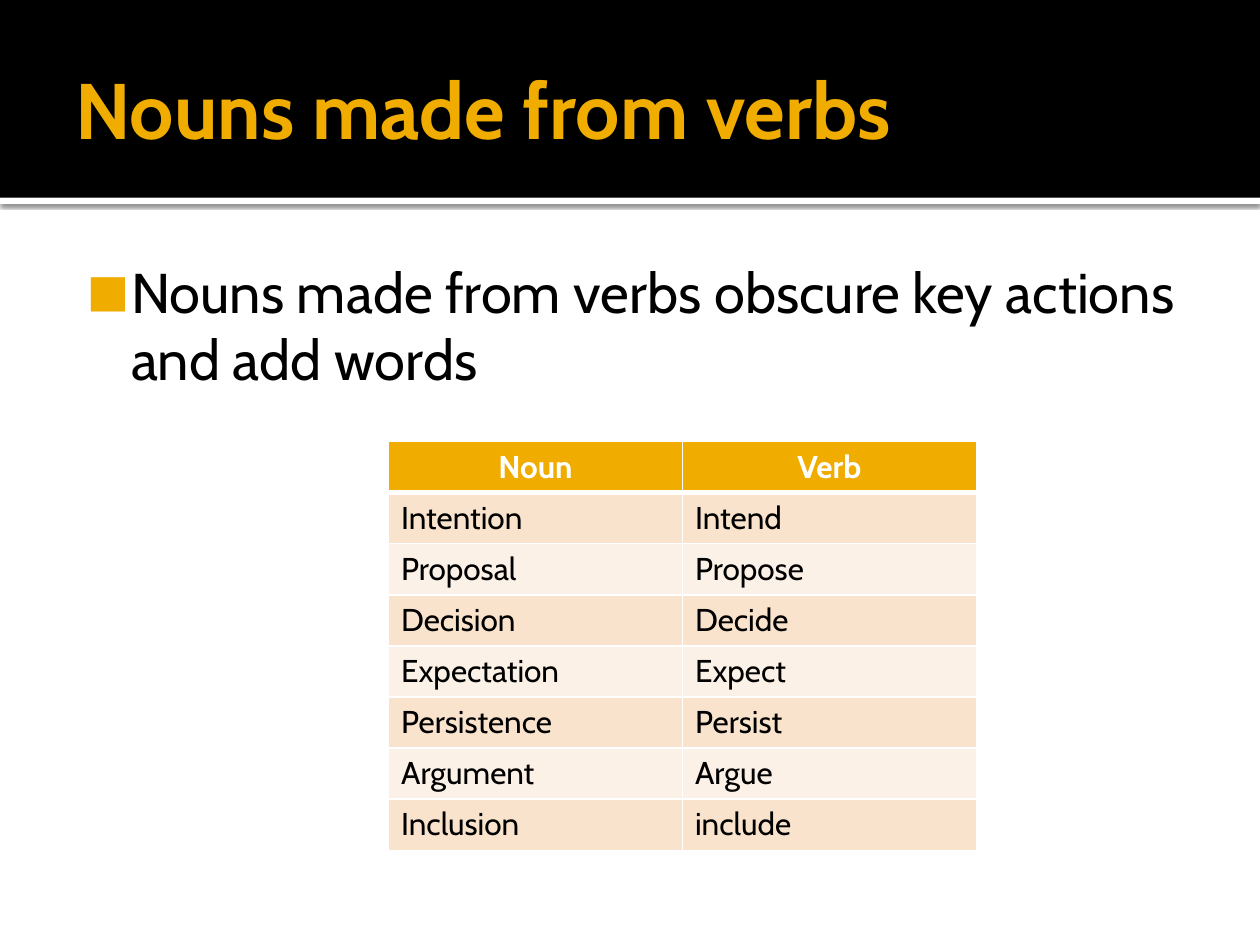
from dataclasses import dataclass

from lxml.etree import SubElement
from pptx import Presentation
from pptx.dml.color import RGBColor
from pptx.enum.shapes import MSO_SHAPE
from pptx.enum.text import MSO_ANCHOR, PP_ALIGN
from pptx.oxml.ns import qn
from pptx.util import Pt

TITLE = "Nouns made from verbs"
BULLET = "Nouns made from verbs obscure key actions and add words"
WORD_PAIRS = [
    ("Noun", "Verb"),
    ("Intention", "Intend"),
    ("Proposal", "Propose"),
    ("Decision", "Decide"),
    ("Expectation", "Expect"),
    ("Persistence", "Persist"),
    ("Argument", "Argue"),
    ("Inclusion", "include"),
]


@dataclass(frozen=True)
class Theme:
    font: str = "Cabin"
    accent: str = "F0AD00"
    black: str = "000000"
    white: str = "FFFFFF"
    bands: tuple = ("F9E3CC", "FCF1E7")
    title_size: float = 45
    body_size: float = 32
    table_size: float = 18


THEME = Theme()
SLIDE_WIDTH, SLIDE_HEIGHT = 720, 540
BANNER_HEIGHT, RULE_HEIGHT = 113, 3.6
TABLE_LEFT, TABLE_TOP = 222, 252.3
COLUMN_WIDTH, ROW_HEIGHT = 168, 29.2


def add_element(parent, tag, **attributes):
    return SubElement(parent, qn(tag), {key: str(value) for key, value in attributes.items()})


def add_run(paragraph, text, size, color, bold=False):
    run = paragraph.add_run()
    run.text = text
    run.font.name = THEME.font
    run.font.size = Pt(size)
    run.font.bold = bold
    run.font.color.rgb = RGBColor.from_string(color)


def add_bar(slide, top, height, color):
    bar = slide.shapes.add_shape(MSO_SHAPE.RECTANGLE, 0, Pt(top), Pt(SLIDE_WIDTH), Pt(height))
    bar.fill.solid()
    bar.fill.fore_color.rgb = RGBColor.from_string(color)
    bar.line.fill.background()
    bar.shadow.inherit = False
    return bar


def add_drop_shadow(shape):
    effects = shape._element.spPr.find(qn("a:effectLst"))
    shadow = add_element(effects, "a:outerShdw", blurRad=Pt(2.5), dist=Pt(0.8),
                         dir=90 * 60000, algn="t", rotWithShape=0)
    color = add_element(shadow, "a:srgbClr", val=THEME.black)
    add_element(color, "a:alpha", val=60000)


def add_text_frame(slide, box, margins, anchor):
    frame = slide.shapes.add_textbox(*map(Pt, box)).text_frame
    frame.word_wrap = True
    frame.vertical_anchor = anchor
    frame.margin_left, frame.margin_top, frame.margin_right, frame.margin_bottom = map(Pt, margins)
    return frame


def set_bullet(paragraph, character, left, hanging):
    properties = paragraph._p.get_or_add_pPr()
    properties.set("marL", str(Pt(left)))
    properties.set("indent", str(-Pt(hanging)))
    color = add_element(properties, "a:buClr")
    add_element(color, "a:srgbClr", val=THEME.accent)
    add_element(properties, "a:buSzPct", val=80000)
    add_element(properties, "a:buFont", typeface=THEME.font)
    add_element(properties, "a:buChar", char=character)


def set_borders(cell, **widths):
    properties = cell._tc.get_or_add_tcPr()
    for side, width in widths.items():
        line = add_element(properties, f"a:ln{side}", w=Pt(width))
        fill = add_element(line, "a:solidFill")
        add_element(fill, "a:srgbClr", val=THEME.white)


def fill_cell(cell, text, row):
    is_header = row == 0
    # The rule under the header is shared with the first body row.
    set_borders(cell, L=1, R=1, T=3 if row == 1 else 1, B=3 if is_header else 1)
    cell.fill.solid()
    background = THEME.accent if is_header else THEME.bands[(row - 1) % 2]
    cell.fill.fore_color.rgb = RGBColor.from_string(background)
    paragraph = cell.text_frame.paragraphs[0]
    paragraph.alignment = PP_ALIGN.CENTER if is_header else PP_ALIGN.LEFT
    add_run(paragraph, text, THEME.table_size,
            THEME.white if is_header else THEME.black, is_header)


def add_word_table(slide):
    rows, columns = len(WORD_PAIRS), len(WORD_PAIRS[0])
    table = slide.shapes.add_table(
        rows, columns, Pt(TABLE_LEFT), Pt(TABLE_TOP),
        Pt(columns * COLUMN_WIDTH), Pt(rows * ROW_HEIGHT)).table
    for column in table.columns:
        column.width = Pt(COLUMN_WIDTH)
    for row, pair in enumerate(WORD_PAIRS):
        table.rows[row].height = Pt(ROW_HEIGHT)
        for column, word in enumerate(pair):
            fill_cell(table.cell(row, column), word, row)


def main():
    presentation = Presentation()
    presentation.slide_width, presentation.slide_height = Pt(SLIDE_WIDTH), Pt(SLIDE_HEIGHT)
    slide = presentation.slides.add_slide(presentation.slide_layouts[6])

    add_drop_shadow(add_bar(slide, BANNER_HEIGHT, RULE_HEIGHT, THEME.white))
    add_bar(slide, 0, BANNER_HEIGHT, THEME.black)

    title = add_text_frame(slide, (36, 12.2, 648, 98.6), (7.2, 3.6, 3.6, 3.6), MSO_ANCHOR.MIDDLE)
    add_run(title.paragraphs[0], TITLE, THEME.title_size, THEME.accent, bold=True)

    body = add_text_frame(slide, (36, 139.7, 648, 364.3), (4.3, 7.2, 7.2, 3.6), MSO_ANCHOR.TOP)
    set_bullet(body.paragraphs[0], "■", left=34.6, hanging=25.2)
    add_run(body.paragraphs[0], BULLET, THEME.body_size, THEME.black)

    add_word_table(slide)
    presentation.save("out.pptx")


if __name__ == "__main__":
    main()
